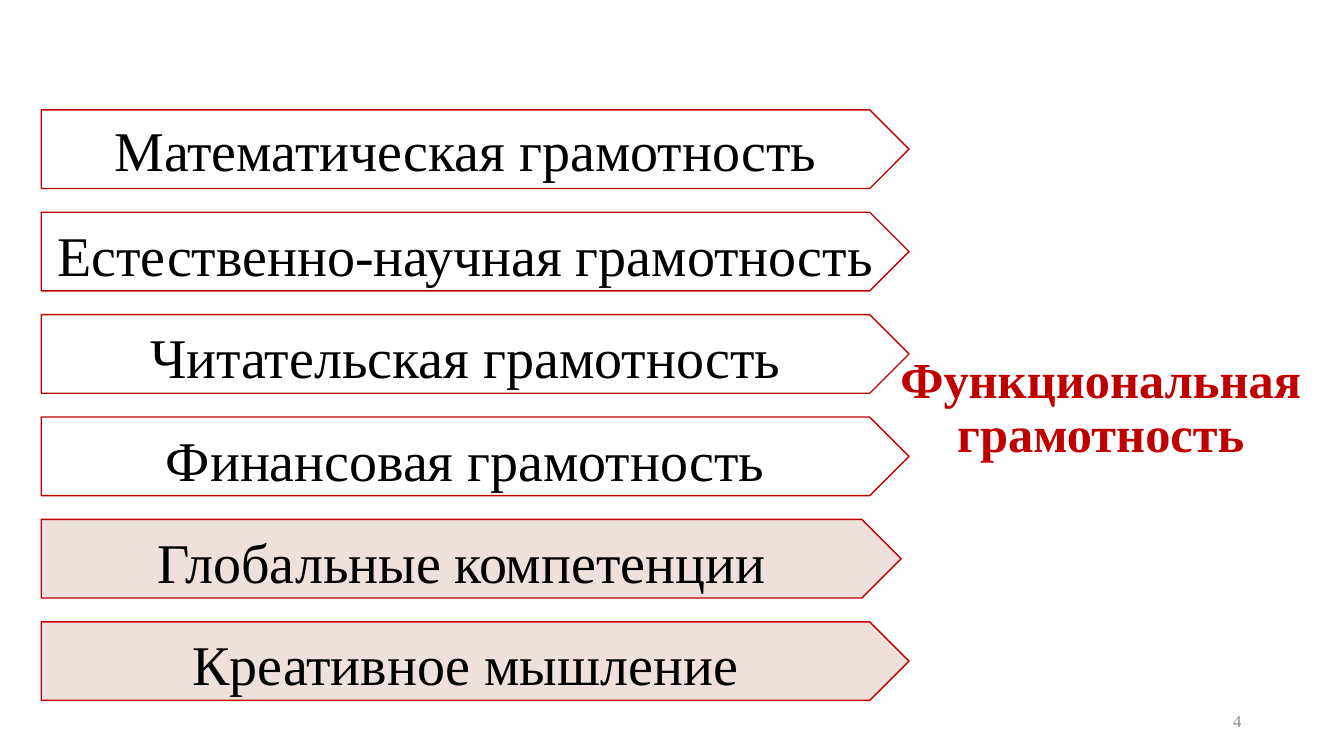
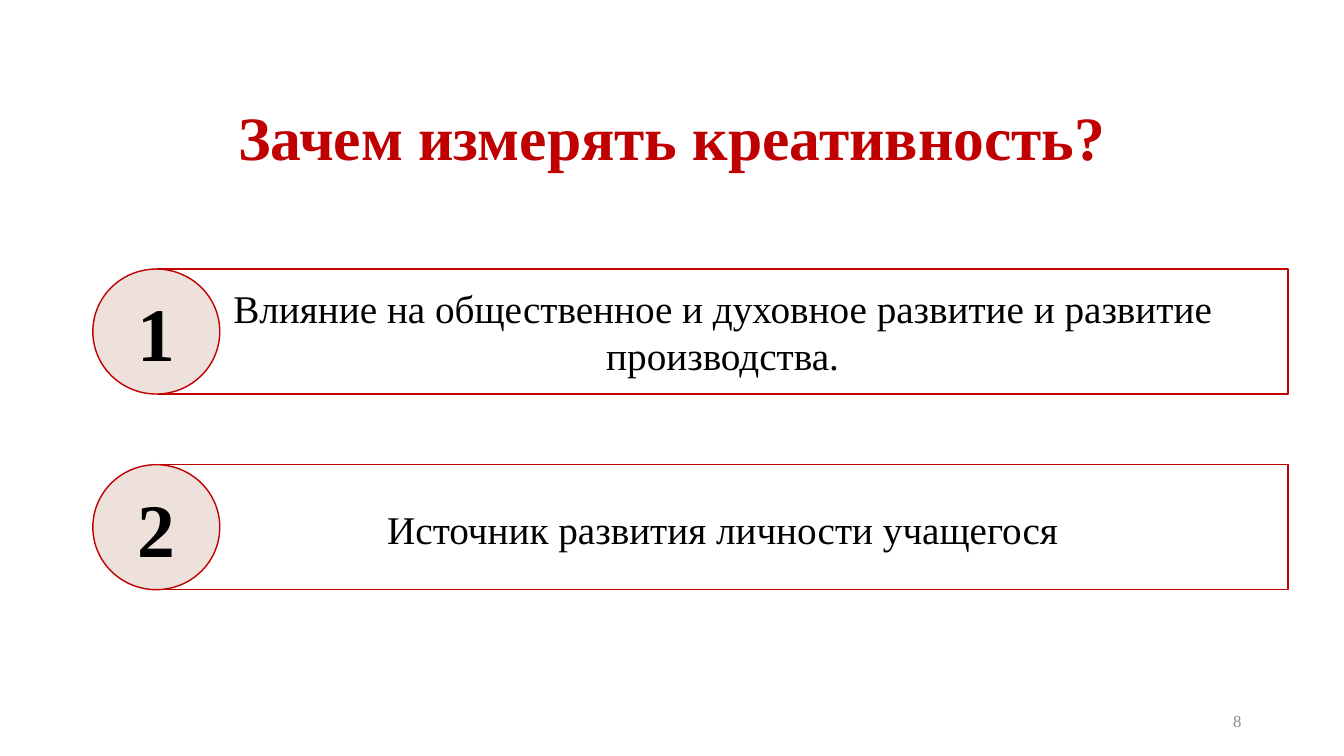
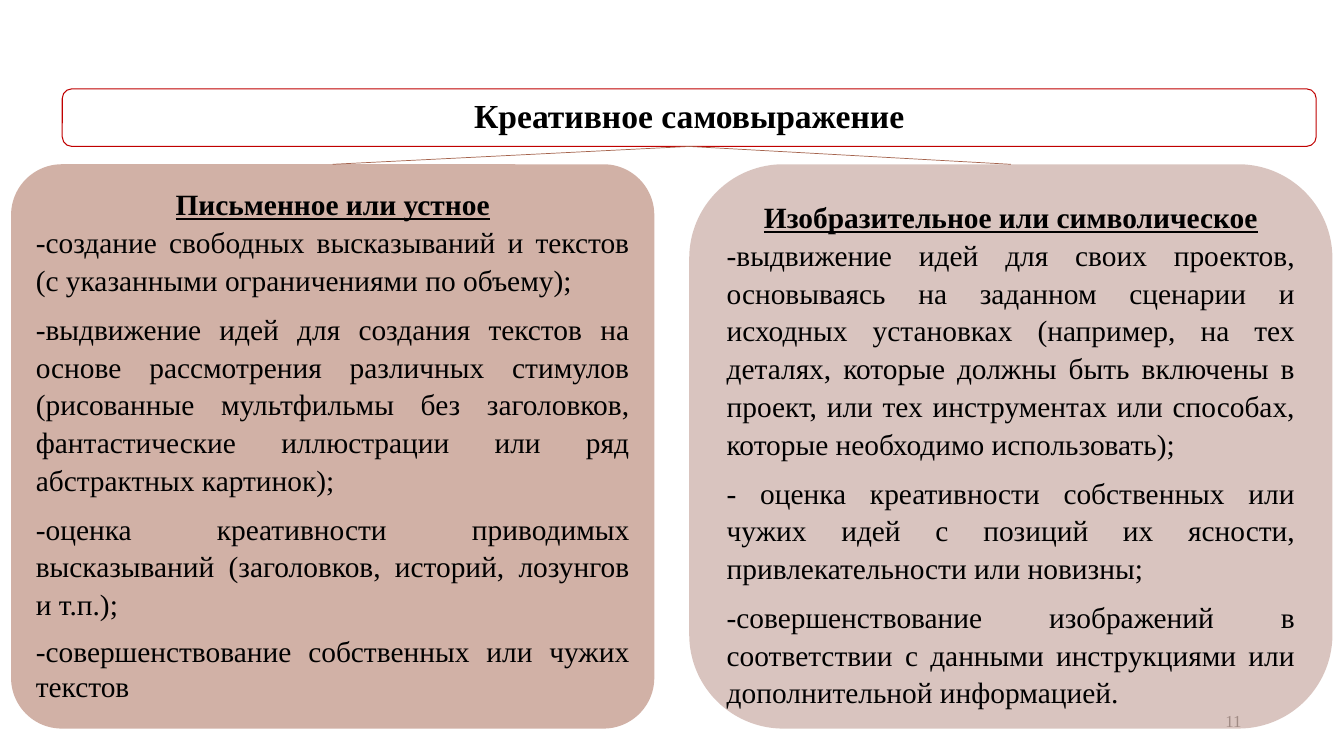
from lxml import etree
from pptx import Presentation
from pptx import util as u
from pptx.dml.color import RGBColor
from pptx.enum import shapes, text
from pptx.oxml.ns import qn

COLORS = {
    "red": "C00000",
    "black": "000000",
    "gray": "8C8C8C",
    "blush": "EEE0DB",
    "clay": "A5644E",
    "rose": "B58B80",
}
FONT = "Times New Roman"
LOOSE = {"spacing": 1.07, "after": 8}
SHAPE = shapes.MSO_SHAPE
ALIGN = text.PP_ALIGN
ANCHOR = text.MSO_ANCHOR


def rgb(name):
    return RGBColor.from_string(COLORS[name])


class Deck:
    def __init__(self):
        self.prs = Presentation()
        self.prs.slide_width = u.Cm(33.87)
        self.prs.slide_height = u.Cm(19.05)
        self.s = None

    def slide(self, number):
        self.s = self.prs.slides.add_slide(self.prs.slide_layouts[6])
        tf = self.textbox(23.92, 17.66, 7.62, 1.01)
        self.para(tf, str(number), 12, color="gray", align=ALIGN.RIGHT)

    def textbox(self, x, y, w, h):
        sp = self.s.shapes.add_textbox(u.Cm(x), u.Cm(y), u.Cm(w), u.Cm(h))
        tf = sp.text_frame
        tf.word_wrap = True
        tf.vertical_anchor = ANCHOR.MIDDLE
        return tf

    def title(self, x, y, w, h, words, size):
        tf = self.textbox(x, y, w, h)
        self.para(tf, words, size, color="red", bold=True, spacing=0.9)

    def shape(self, kind, x, y, w, h, fill=None, line="red", width=1, alpha=None):
        sp = self.s.shapes.add_shape(kind, u.Cm(x), u.Cm(y), u.Cm(w), u.Cm(h))
        sp.shadow.inherit = False
        if fill:
            sp.fill.solid()
            sp.fill.fore_color.rgb = rgb(fill)
        else:
            sp.fill.background()
        if alpha:
            color = sp._element.spPr.find(".//" + qn("a:srgbClr"))
            etree.SubElement(color, qn("a:alpha"), val=str(alpha * 1000))
        if line:
            sp.line.color.rgb = rgb(line)
            sp.line.width = u.Pt(width)
        else:
            sp.line.fill.background()
        sp.text_frame.word_wrap = True
        sp.text_frame.vertical_anchor = ANCHOR.MIDDLE
        return sp

    def para(self, tf, words, size, color="black", bold=False, underline=False,
             align=ALIGN.CENTER, spacing=None, after=None):
        p = tf.paragraphs[0]
        if p.runs:
            p = tf.add_paragraph()
        p.alignment = align
        if spacing:
            p.line_spacing = spacing
        if after:
            p.space_after = u.Pt(after)
        r = p.add_run()
        r.text = words
        r.font.name = FONT
        r.font.size = u.Pt(size)
        r.font.bold = bold
        r.font.underline = underline
        r.font.color.rgb = rgb(color)

    def card(self, x, fill, heading, items, radius=None, tight_last=False):
        sp = self.shape(SHAPE.ROUNDED_RECTANGLE, x, 4.14, 16.21, 14.22,
                        fill, line=None, alpha=50)
        if radius:
            sp.adjustments[0] = radius
        tf = sp.text_frame
        tf.vertical_anchor = ANCHOR.TOP
        self.para(tf, heading, 21, bold=True, underline=True, spacing=1.07)
        for item in items:
            tight = tight_last and item == items[-1]
            self.para(tf, item, 21, align=ALIGN.JUSTIFY, **({} if tight else LOOSE))
        return sp

    def link(self, child, parent):
        cn = self.s.shapes.add_connector(shapes.MSO_CONNECTOR.STRAIGHT, 0, 0, 0, 0)
        cn.begin_connect(child, 0)
        cn.end_connect(parent, 2)
        cn.line.color.rgb = rgb("clay")
        cn.line.width = u.Pt(0.5)
        etree.SubElement(cn._element.spPr, qn("a:effectLst"))


def literacy(deck):
    deck.slide(4)
    deck.title(21.54, 7.62, 12.4, 5.38, "Функциональная грамотность", 36)
    arrows = [
        ("Математическая грамотность", 21.87, None, {}),
        ("Естественно-научная грамотность", 21.87, None, LOOSE),
        ("Читательская грамотность", 21.87, None, LOOSE),
        ("Финансовая грамотность", 21.87, None, LOOSE),
        ("Глобальные компетенции", 21.67, "blush", LOOSE),
        ("Креативное мышление", 21.87, "blush", LOOSE),
    ]
    for i, (words, width, fill, gaps) in enumerate(arrows):
        sp = deck.shape(SHAPE.PENTAGON, 1.04, 2.77 + 2.58 * i, width, 1.98, fill)
        deck.para(sp.text_frame, words, 40, **gaps)


def reasons(deck):
    deck.slide(8)
    deck.title(2.34, 2.41, 29.21, 2.26, "Зачем измерять креативность?", 44)
    rows = [
        ("Влияние на общественное и духовное развитие и развитие производства.", {}),
        ("Источник развития личности учащегося", LOOSE),
    ]
    for i, (words, gaps) in enumerate(rows):
        y = 6.78 + 4.93 * i
        bar = deck.shape(SHAPE.RECTANGLE, 3.96, y, 28.5, 3.15)
        deck.para(bar.text_frame, words, 28, **gaps)
        badge = deck.shape(SHAPE.OVAL, 2.34, y, 3.2, 3.15, "blush")
        deck.para(badge.text_frame, str(i + 1), 54, bold=True)


def expression(deck):
    deck.slide(11)
    header = deck.shape(SHAPE.ROUNDED_RECTANGLE, 1.57, 2.24, 31.6, 1.45, width=0.75)
    deck.para(header.text_frame, "Креативное самовыражение", 24, bold=True, spacing=0.9)
    written = deck.card(0.28, "clay", "Письменное или устное", [
        "-создание свободных высказываний и текстов (с указанными ограничениями "
        "по объему);",
        "-выдвижение идей для создания текстов на основе рассмотрения различных "
        "стимулов (рисованные мультфильмы без заголовков, фантастические "
        "иллюстрации или ряд абстрактных картинок);",
        "-оценка креативности приводимых высказываний (заголовков, историй, "
        "лозунгов и т.п.);",
        "-совершенствование собственных или чужих текстов",
    ], radius=0.09, tight_last=True)
    visual = deck.card(17.37, "rose", "Изобразительное или символическое", [
        "-выдвижение идей для своих проектов, основываясь на заданном сценарии и "
        "исходных установках (например, на тех деталях, которые должны быть "
        "включены в проект, или тех инструментах или способах, которые "
        "необходимо использовать);",
        "- оценка креативности собственных или чужих идей с позиций их ясности, "
        "привлекательности или новизны;",
        "-совершенствование изображений в соответствии с данными инструкциями "
        "или дополнительной информацией.",
    ])
    for card in (written, visual):
        deck.link(card, header)


def main():
    deck = Deck()
    literacy(deck)
    reasons(deck)
    expression(deck)
    deck.prs.save("out.pptx")


if __name__ == "__main__":
    main()
